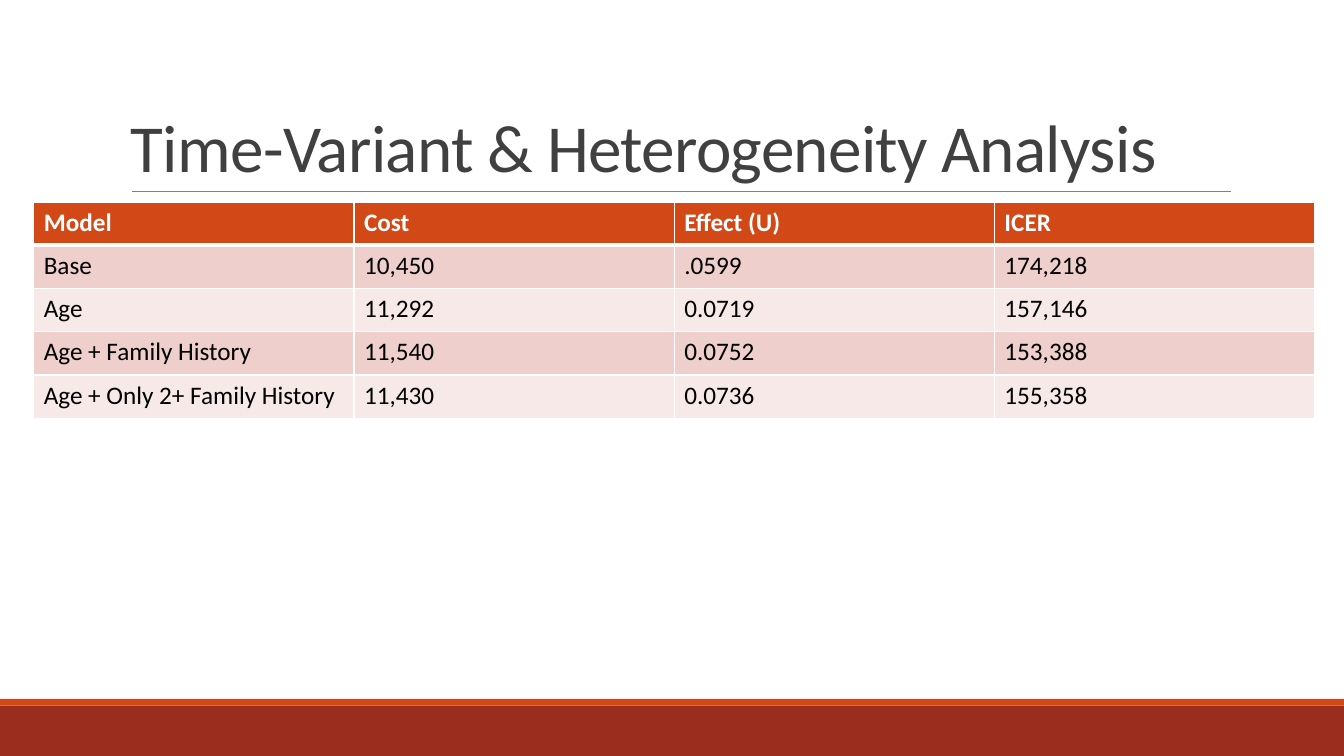
"""Build the time-variant and heterogeneity analysis slide with its results table."""
from pptx import Presentation
from pptx.dml.color import RGBColor
from pptx.enum.shapes import MSO_CONNECTOR, MSO_SHAPE
from pptx.enum.text import MSO_ANCHOR
from pptx.oxml.ns import qn
from pptx.util import Cm, Pt
from lxml import etree

RECTANGLE = MSO_SHAPE.RECTANGLE
STRAIGHT = MSO_CONNECTOR.STRAIGHT
BOTTOM = MSO_ANCHOR.BOTTOM

TITLE = "Time-Variant & Heterogeneity Analysis"
RESULTS = [
    ("Model", "Cost", "Effect (U)", "ICER"),
    ("Base", "10,450", ".0599", "174,218"),
    ("Age", "11,292", "0.0719", "157,146"),
    ("Age + Family History", "11,540", "0.0752", "153,388"),
    ("Age + Only 2+ Family History", "11,430", "0.0736", "155,358"),
]

THEME = {
    "font": "Calibri",
    "title": {"size": Pt(48), "color": "404040"},
    "header": {"size": Pt(18), "color": "FFFFFF", "bold": True},
    "body": {"size": Pt(18), "color": "000000", "bold": False},
    "header_fill": "D34817",
    "row_fills": ("F7E9E8", "EFCFCC"),
    "border": "FFFFFF",
    "rule": "808080",
    "footer": "9B2D1F",
    "accent": "D34817",
}

SLIDE_WIDTH, SLIDE_HEIGHT = 33.87, 19.05
FOOTER_HEIGHT, ACCENT_HEIGHT = 1.27, 0.17
RULE_LEFT, RULE_RIGHT, RULE_TOP = 3.33, 31.01, 4.83
TITLE_BOX = (3.05, 0.79, 27.94, 4.04)
TABLE_LEFT, TABLE_TOP = 0.85, 5.09
COLUMN_WIDTH, ROW_HEIGHT = 8.07, 1.09


def rgb(color):
    return RGBColor.from_string(color)


def write(frame, text, style):
    run = frame.paragraphs[0].add_run()
    run.text = text
    formats = {"name": THEME["font"], **style}
    run.font.color.rgb = rgb(formats.pop("color"))
    for attribute, value in formats.items():
        setattr(run.font, attribute, value)
    return run


def add_band(slide, top, height, color):
    band = slide.shapes.add_shape(
        RECTANGLE, 0, Cm(top), Cm(SLIDE_WIDTH), Cm(height))
    band.shadow.inherit = False
    band.fill.solid()
    band.fill.fore_color.rgb = rgb(color)
    band.line.fill.background()


def add_rule(slide):
    rule = slide.shapes.add_connector(
        STRAIGHT, Cm(RULE_LEFT), Cm(RULE_TOP), Cm(RULE_RIGHT), Cm(RULE_TOP))
    rule.line.color.rgb = rgb(THEME["rule"])
    rule.line.width = Pt(0.5)
    etree.SubElement(rule._element.spPr, qn("a:effectLst"))


def add_title(slide):
    frame = slide.shapes.add_textbox(*map(Cm, TITLE_BOX)).text_frame
    frame.word_wrap = True
    frame.vertical_anchor = BOTTOM
    frame.paragraphs[0].line_spacing = 0.85
    run = write(frame, TITLE, THEME["title"])
    run.font._element.set("spc", "-50")


def set_borders(cell, widths):
    properties = cell._tc.get_or_add_tcPr()
    for side, width in widths.items():
        border = etree.SubElement(properties, qn(f"a:ln{side}"), w=str(Pt(width)))
        fill = etree.SubElement(border, qn("a:solidFill"))
        etree.SubElement(fill, qn("a:srgbClr"), val=THEME["border"])


def add_results(slide):
    row_count, column_count = len(RESULTS), len(RESULTS[0])
    table = slide.shapes.add_table(
        row_count, column_count, Cm(TABLE_LEFT), Cm(TABLE_TOP),
        Cm(COLUMN_WIDTH * column_count), Cm(ROW_HEIGHT * row_count)).table
    for column in table.columns:
        column.width = Cm(COLUMN_WIDTH)
    for r, values in enumerate(RESULTS):
        table.rows[r].height = Cm(ROW_HEIGHT)
        is_header = r == 0
        fill = THEME["header_fill"] if is_header else THEME["row_fills"][r % 2]
        style = THEME["header" if is_header else "body"]
        widths = {"L": 1, "R": 1, "T": 3 if r == 1 else 1, "B": 3 if is_header else 1}
        for c, value in enumerate(values):
            cell = table.cell(r, c)
            set_borders(cell, widths)
            cell.fill.solid()
            cell.fill.fore_color.rgb = rgb(fill)
            write(cell.text_frame, value, style)


def main():
    deck = Presentation()
    deck.slide_width, deck.slide_height = Cm(SLIDE_WIDTH), Cm(SLIDE_HEIGHT)
    slide = deck.slides.add_slide(deck.slide_layouts[6])
    footer_top = SLIDE_HEIGHT - FOOTER_HEIGHT
    add_band(slide, footer_top, FOOTER_HEIGHT, THEME["footer"])
    add_band(slide, footer_top - ACCENT_HEIGHT, ACCENT_HEIGHT, THEME["accent"])
    add_rule(slide)
    add_title(slide)
    add_results(slide)
    deck.save("out.pptx")


if __name__ == "__main__":
    main()
